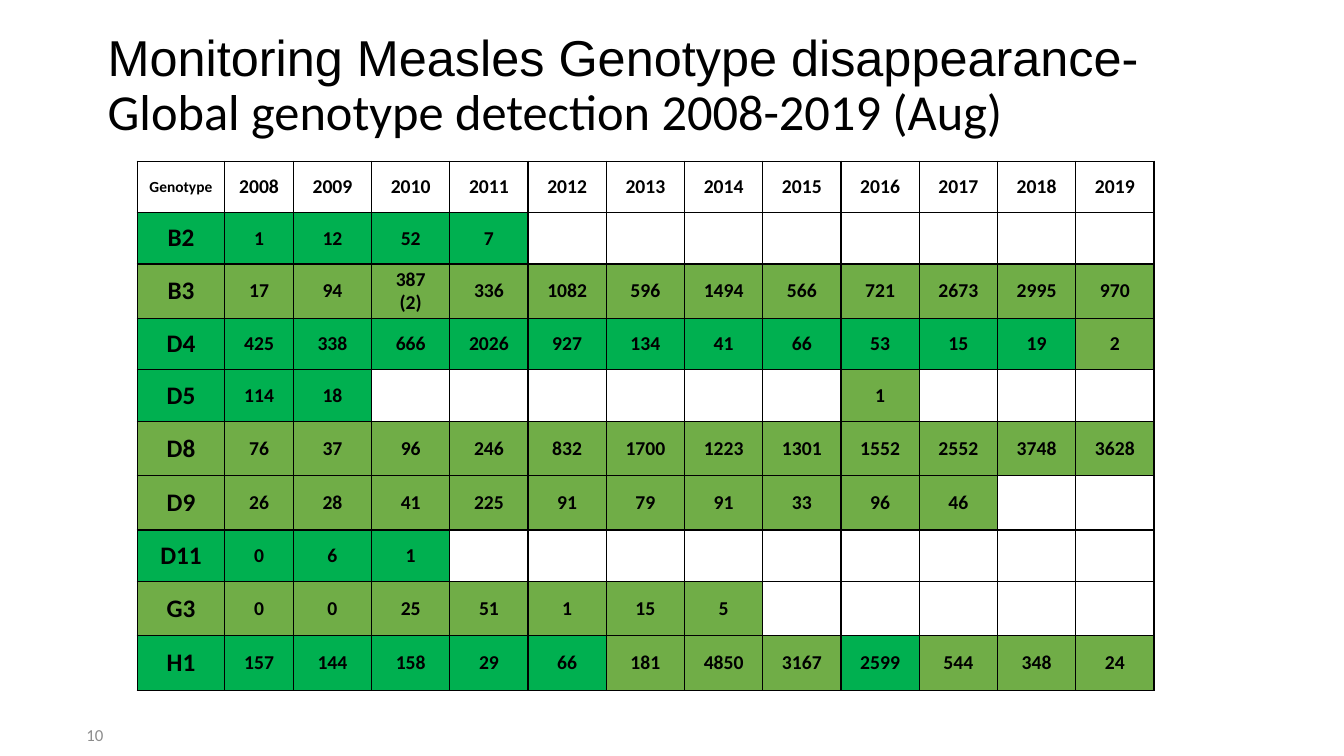
from lxml import etree
from pptx import Presentation
from pptx.dml.color import RGBColor
from pptx.enum.text import MSO_ANCHOR as Anchor, PP_ALIGN as Align
from pptx.oxml.ns import qn
from pptx.util import Inches, Pt

BLACK = RGBColor(0x00, 0x00, 0x00)
GRAY = RGBColor(0x8C, 0x8C, 0x8C)
WHITE = RGBColor(0xFF, 0xFF, 0xFF)
GREEN = RGBColor(0x00, 0xB0, 0x50)
OLIVE = RGBColor(0x70, 0xAD, 0x47)
FILLS = {"G": GREEN, "O": OLIVE, ".": WHITE}

TITLE_LINES = [
    ("Monitoring Measles Genotype disappearance-", "Arial"),
    ("Global genotype detection 2008-2019 (Aug)", "Calibri"),
]
SLIDE_NUMBER = "10"
HEADER = ["Genotype"] + [str(year) for year in range(2008, 2020)]
GENOTYPES = [
    ("GGGGG........", ["B2", "1", "12", "52", "7"]),
    ("OOOOOOOOOOOOO", ["B3", "17", "94", "387\n(2)", "336", "1082", "596",
                       "1494", "566", "721", "2673", "2995", "970"]),
    ("GGGGGGGGGGGGO", ["D4", "425", "338", "666", "2026", "927", "134",
                       "41", "66", "53", "15", "19", "2"]),
    ("GGG......O...", ["D5", "114", "18", "", "", "", "", "", "", "1"]),
    ("OOOOOOOOOOOOO", ["D8", "76", "37", "96", "246", "832", "1700",
                       "1223", "1301", "1552", "2552", "3748", "3628"]),
    ("OOOOOOOOOOO..", ["D9", "26", "28", "41", "225", "91", "79",
                       "91", "33", "96", "46"]),
    ("GGGG.........", ["D11", "0", "6", "1"]),
    ("OOOOOOOO.....", ["G3", "0", "0", "25", "51", "1", "15", "5"]),
    ("GGGGGGOOOGOOO", ["H1", "157", "144", "158", "29", "66", "181",
                       "4850", "3167", "2599", "544", "348", "24"]),
]
COLUMN_WIDTHS = [0.87, 0.68] + [0.776] * 11
ROW_HEIGHTS = [0.51, 0.51, 0.54, 0.51, 0.51, 0.54, 0.54, 0.51, 0.54, 0.54]


def add_text(paragraph, text, size=14, font="Calibri", color=BLACK, bold=False):
    run = paragraph.add_run()
    run.text = text
    run.font.size = Pt(size)
    run.font.name = font
    run.font.bold = bold
    run.font.color.rgb = color


def add_text_frame(slide, left, top, width, height):
    box = slide.shapes.add_textbox(Inches(left), Inches(top), Inches(width), Inches(height))
    box.text_frame.word_wrap = True
    box.text_frame.vertical_anchor = Anchor.MIDDLE
    return box.text_frame


def add_borders(cell):
    properties = cell._tc.get_or_add_tcPr()
    for index, side in enumerate(("a:lnL", "a:lnR", "a:lnT", "a:lnB")):
        line = etree.Element(qn(side), w=str(Pt(1)))
        fill = etree.SubElement(line, qn("a:solidFill"))
        etree.SubElement(fill, qn("a:srgbClr"), val=str(BLACK))
        properties.insert(index, line)


def format_cell(cell, text, size, fill):
    cell.fill.solid()
    cell.fill.fore_color.rgb = fill
    cell.vertical_anchor = Anchor.MIDDLE
    cell.margin_left = cell.margin_right = Inches(0.05)
    cell.margin_top = cell.margin_bottom = Inches(0.02)
    add_borders(cell)
    if not text:
        return
    for index, line in enumerate(text.split("\n")):
        frame = cell.text_frame
        paragraph = frame.add_paragraph() if index else frame.paragraphs[0]
        paragraph.alignment = Align.CENTER
        add_text(paragraph, line, size=size, bold=True)


def add_genotype_table(slide):
    shape = slide.shapes.add_table(
        len(ROW_HEIGHTS), len(COLUMN_WIDTHS), Inches(1.36), Inches(1.6),
        Inches(sum(COLUMN_WIDTHS)), Inches(sum(ROW_HEIGHTS)))
    table = shape.table
    table.horz_banding = False
    for column, width in zip(table.columns, COLUMN_WIDTHS):
        column.width = Inches(width)
    for row, height in zip(table.rows, ROW_HEIGHTS):
        row.height = Inches(height)
    rows = [("." * len(HEADER), HEADER)] + GENOTYPES
    for row_index, (fills, values) in enumerate(rows):
        padded = values + [""] * (len(fills) - len(values))
        for column_index, (fill, value) in enumerate(zip(fills, padded)):
            label_size = 18 if row_index else 11
            size = 14 if column_index else label_size
            format_cell(table.cell(row_index, column_index), value, size, FILLS[fill])


def main():
    presentation = Presentation()
    presentation.slide_width = Inches(13.33)
    presentation.slide_height = Inches(7.5)
    slide = presentation.slides.add_slide(presentation.slide_layouts[6])

    title = add_text_frame(slide, 0.97, 0.25, 12.11, 1.23).paragraphs[0]
    title.line_spacing = 0.9
    for index, (line, font) in enumerate(TITLE_LINES):
        if index:
            title.add_line_break()
        add_text(title, line, size=36, font=font)

    number = add_text_frame(slide, 0.76, 7.09, 3, 0.4).paragraphs[0]
    add_text(number, SLIDE_NUMBER, size=12, color=GRAY)

    add_genotype_table(slide)
    presentation.save("out.pptx")


if __name__ == "__main__":
    main()
